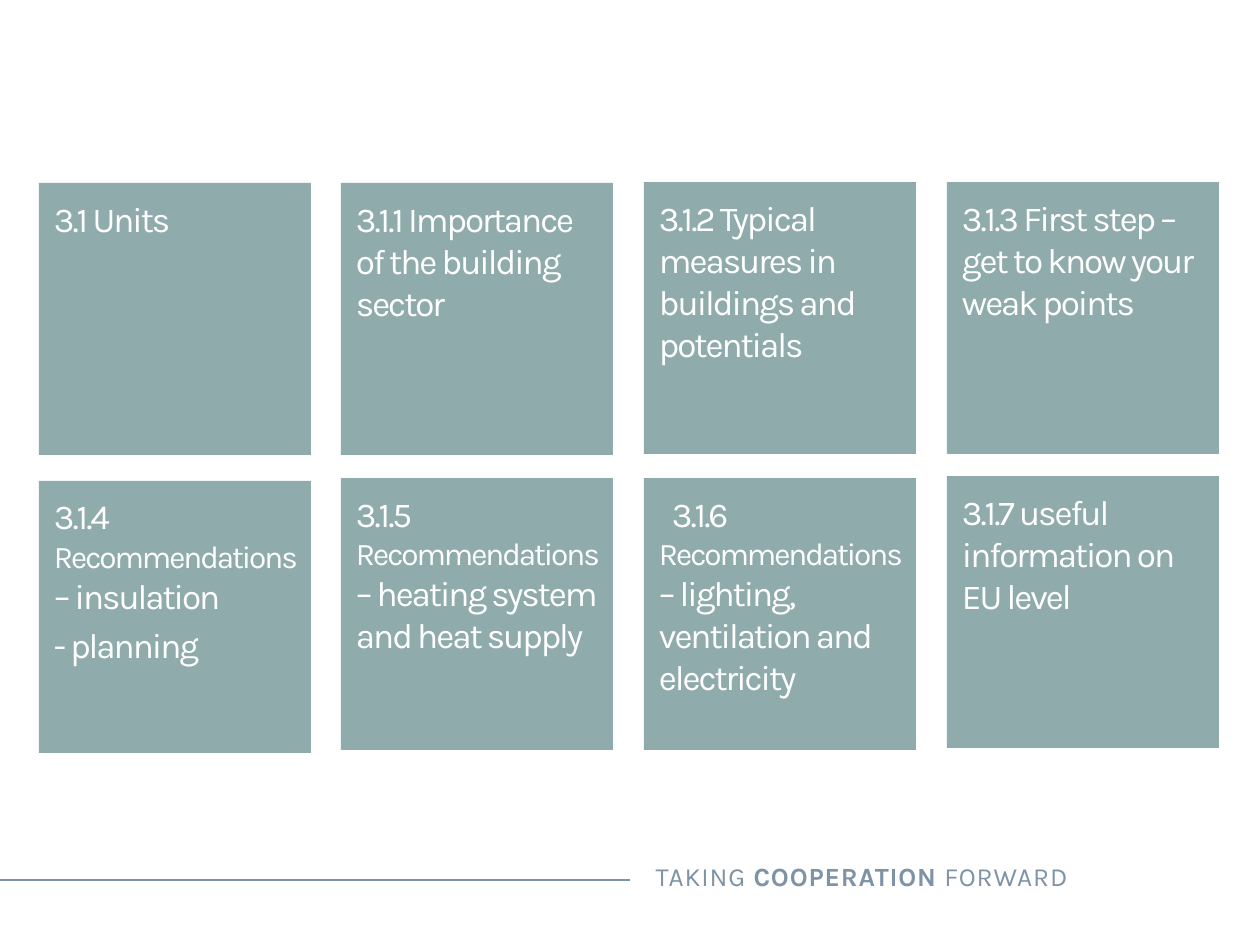
from pptx import Presentation
from pptx.dml.color import RGBColor
from pptx.enum.shapes import MSO_CONNECTOR, MSO_SHAPE
from pptx.enum.text import MSO_ANCHOR, PP_ALIGN
from pptx.util import Pt
from lxml.etree import SubElement
from pptx.oxml.ns import qn

PX = 914400 / 126
SLATE, SAGE, WHITE = "7E93A5", "90ABAB", "FFFFFF"


def px(n):
    return round(n * PX)


def add_run(p, text, color, spc, **fmt):
    r = p.add_run()
    r.text = text
    for key, value in {"name": "Karla", **fmt}.items():
        setattr(r.font, key, value)
    r.font.color.rgb = RGBColor.from_string(color)
    r.font._element.set("spc", str(spc))


prs = Presentation()
prs.slide_width, prs.slide_height = px(1260), px(945)
s = prs.slides.add_slide(prs.slide_layouts[6])

line = s.shapes.add_connector(MSO_CONNECTOR.STRAIGHT, px(-1), px(880), px(630), px(880))
line.line.color.rgb = RGBColor.from_string(SLATE)
line.line.width = Pt(0.75)
SubElement(line._element.spPr, qn("a:effectLst"))

tf = s.shapes.add_textbox(px(489), px(854), px(591), px(44)).text_frame
tf.word_wrap = True
p = tf.paragraphs[0]
p.alignment = PP_ALIGN.RIGHT
for text, bold in [("TAKING ", False), ("COOPERATION", True), (" FORWARD", False)]:
    add_run(p, text, SLATE, 50, size=Pt(15), bold=bold)

REC = ("Recommendations ", 18)
TILES = [
    (183, 0, [[("3.1 Units", 20)]]),
    (183, 0, [[("3.1.1 Importance of the building sector", 20)]]),
    (182, 0, [[("3.1.2 Typical measures in buildings and potentials", 20)]]),
    (182, 0, [[("3.1.3 First step – get to know your weak points", 20)]]),
    (481, 0, [[("3.1.4 ", 20), REC, ("– insulation", 20)], [("- planning", 20)]]),
    (478, 0, [[("3.1.5 ", 20), REC, ("– heating system and heat supply", 20)]]),
    (478, 13, [[("3.1.6 ", 20), REC, ("– lighting, ventilation and electricity", 20)]]),
    (476, 0, [[("3.1.7 useful information on EU level", 20)]]),
]
FRAME = {
    "margin_left": px(15),
    "margin_top": px(14),
    "margin_right": px(12),
    "margin_bottom": px(15),
    "vertical_anchor": MSO_ANCHOR.TOP,
    "word_wrap": True,
}

for i, (top, indent, paragraphs) in enumerate(TILES):
    left = 39 + round(i % 4 * 302.5)
    sp = s.shapes.add_shape(MSO_SHAPE.RECTANGLE, px(left), px(top), px(272), px(272))
    sp.shadow.inherit = False
    sp.fill.solid()
    sp.fill.fore_color.rgb = RGBColor.from_string(SAGE)
    sp.line.fill.background()
    tf = sp.text_frame
    for key, value in FRAME.items():
        setattr(tf, key, value)
    for j, runs in enumerate(paragraphs):
        p = tf.add_paragraph() if j else tf.paragraphs[0]
        p.alignment = PP_ALIGN.LEFT
        if j:
            p.space_before = Pt(4)
        if indent:
            p._p.get_or_add_pPr().set("indent", str(px(indent)))
        for text, size in runs:
            add_run(p, text, WHITE, -120, size=Pt(size))

prs.save("out.pptx")
